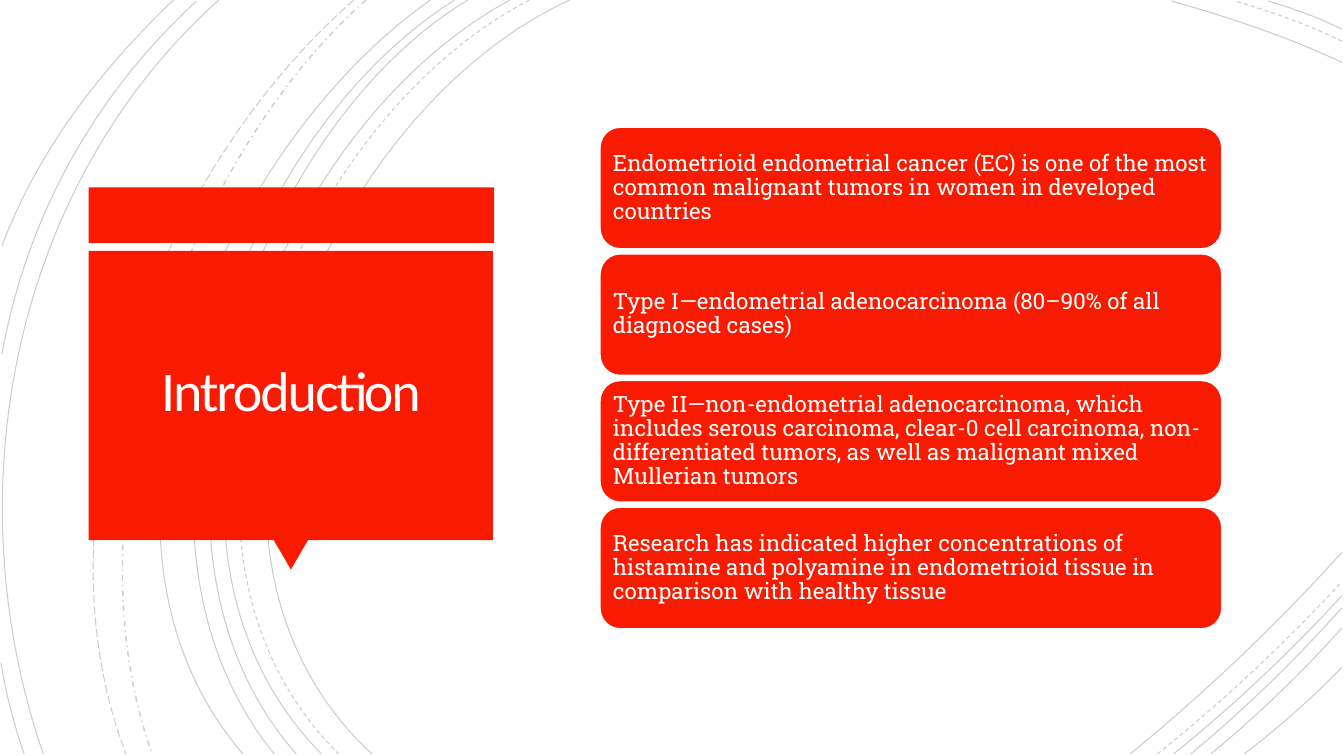
import pptx
import pptx.dml.color
import pptx.enum.dml
import pptx.enum.shapes
import pptx.enum.text
import pptx.oxml
import pptx.oxml.ns
import pptx.util

Inches = pptx.util.Inches
Pt = pptx.util.Pt
SHAPE = pptx.enum.shapes.MSO_SHAPE
DASH = pptx.enum.dml.MSO_LINE
ALIGN = pptx.enum.text.PP_ALIGN
NAMESPACE = pptx.oxml.ns.nsdecls("a")

COLORS = {"red": "F81B02", "white": "FFFFFF", "title": "FFFEFF", "arc": "000000"}

ARC_STYLES = {  # name: dash, width in points
    "solid": (DASH.SOLID, 0.75),
    "dash": (DASH.DASH, 0.75),
    "long dash": (DASH.LONG_DASH, 0.75),
    "dash dot": (DASH.DASH_DOT, 1),
}
ARC_RIGHT, ARC_TOP, ARC_BOTTOM = 13.31, 0.01, 7.48

# Sweeps cross the full height: style, top x, upper control, lower control, bottom x.
SWEEPS = [
    ("solid", 5.65, (3.15, 1.15), (1.43, 5.4), 3.69),
    ("dash", 5.25, (2.85, 1.25), (1.23, 5.37), 3.36),
    ("solid", 5.06, (2.7, 1.27), (1.1, 5.37), 3.19),
    ("solid", 4.64, (2.44, 1.33), (1.1, 5.41), 2.94),
    ("solid", 4.51, (2.31, 1.38), (0.97, 5.33), 2.72),
    ("solid", 4.27, (2.17, 1.47), (0.53, 5.29), 2.41),
    ("dash dot", 3.63, (1.76, 1.66), (0.65, 5.09), 1.51),
    ("long dash", 3.51, (1.57, 1.69), (0.29, 4.99), 1.25),
    ("solid", 2.17, (0.11, 1.85), (-0.46, 4.9), 0.43),
]

# Corner arcs cut a right corner: style, x on the top or bottom edge, y on the right edge.
TOP_CORNER = [("solid", 11.62, 0.62), ("dash", 12.25, 0.41), ("solid", 12.58, 0.29)]
BOTTOM_CORNER = [
    ("solid", 11.21, 5.48), ("dash", 11.48, 5.77), ("solid", 11.64, 5.91),
    ("solid", 11.81, 6.03), ("solid", 12.01, 6.23), ("solid", 12.34, 6.62),
]
# Bends place the two controls as fractions of the way from start to end.
TOP_BEND = ((0.32, 0.42), (0.67, 0.74))
BOTTOM_BEND = ((0.35, 0.3), (0.69, 0.64))

# Left edge arcs: start, end, bend.
LEFT_EDGE = [
    ((1.95, 0.01), (0.02, 3.51), ((0.53, 0.27), (0.87, 0.61))),
    ((1.72, 0), (0.02, 2.44), ((0.42, 0.28), (0.79, 0.61))),
    ((0.01, 6.58), (0.24, 7.48), ((0.22, 0.34), (0.57, 0.68))),
]

STATEMENTS = [
    "Endometrioid endometrial cancer (EC) is one of the most common malignant "
    "tumors in women in developed countries",
    "Type I—endometrial adenocarcinoma (80–90% of all diagnosed cases)",
    "Type II—non-endometrial adenocarcinoma, which includes serous carcinoma, "
    "clear-0 cell carcinoma, non-differentiated tumors, as well as malignant "
    "mixed Mullerian tumors",
    "Research has indicated higher concentrations of histamine and polyamine in "
    "endometrioid tissue in comparison with healthy tissue",
]
FIRST_CARD_TOP, LAST_CARD_TOP = 1.26, 5.03


def rgb(name):
    return pptx.dml.color.RGBColor.from_string(COLORS[name])


def set_attributes(target, values):
    for name, value in values.items():
        setattr(target, name, value)


def add_arc(slide, style, *points):
    """Draw a faint cubic curve through start, two controls and end."""
    start, *others = [(Inches(x), Inches(y)) for x, y in points]
    builder = slide.shapes.build_freeform(*start, scale=1.0)
    builder.add_line_segments(others, close=False)
    arc = builder.convert_to_shape()
    segments = arc.element.xpath(".//a:lnTo")
    curve = pptx.oxml.parse_xml(f"<a:cubicBezTo {NAMESPACE}/>")
    segments[0].addprevious(curve)
    for segment in segments:
        curve.append(segment[0])
        segment.getparent().remove(segment)
    arc.shadow.inherit = False
    arc.fill.background()
    arc.line.color.rgb = rgb("arc")
    dash, width = ARC_STYLES[style]
    set_attributes(arc.line, {"width": Pt(width), "dash_style": dash})
    color = arc.element.xpath("./p:spPr/a:ln//a:srgbClr")[0]
    color.append(pptx.oxml.parse_xml(f'<a:alpha {NAMESPACE} val="20000"/>'))


def add_bent_arc(slide, style, start, end, bend):
    """Draw an arc whose controls are fractions of the span from start to end."""
    controls = [
        (start[0] + across * (end[0] - start[0]), start[1] + down * (end[1] - start[1]))
        for across, down in bend
    ]
    add_arc(slide, style, start, *controls, end)


def add_background_arcs(slide):
    for style, top_x, upper, lower, bottom_x in SWEEPS:
        add_arc(slide, style, (top_x, 0), upper, lower, (bottom_x, ARC_BOTTOM))
    for style, x, y in TOP_CORNER:
        add_bent_arc(slide, style, (ARC_RIGHT, y), (x, ARC_TOP), TOP_BEND)
    for style, x, y in BOTTOM_CORNER:
        add_bent_arc(slide, style, (x, ARC_BOTTOM), (ARC_RIGHT, y), BOTTOM_BEND)
    for start, end, bend in LEFT_EDGE:
        add_bent_arc(slide, "solid", start, end, bend)


def add_red_shape(slide, kind, left, top, width, height):
    shape = slide.shapes.add_shape(
        kind, Inches(left), Inches(top), Inches(width), Inches(height))
    shape.shadow.inherit = False
    shape.fill.solid()
    shape.fill.fore_color.rgb = rgb("red")
    shape.line.fill.background()
    return shape


def write_text(shape, text, inset, paragraph_format, font_format, color):
    frame = shape.text_frame
    frame.text = text
    margins = ("margin_left", "margin_top", "margin_right", "margin_bottom")
    set_attributes(frame, dict.fromkeys(margins, Inches(inset)))
    set_attributes(frame, {
        "word_wrap": True,
        "auto_size": pptx.enum.text.MSO_AUTO_SIZE.NONE,
        "vertical_anchor": pptx.enum.text.MSO_ANCHOR.MIDDLE,
    })
    paragraph = frame.paragraphs[0]
    set_attributes(paragraph, paragraph_format)
    font = paragraph.runs[0].font
    set_attributes(font, font_format)
    font.color.rgb = rgb(color)


def add_title_callout(slide):
    add_red_shape(slide, SHAPE.RECTANGLE, 0.88, 1.86, 4.02, 0.55)
    pointer = add_red_shape(slide, SHAPE.ISOSCELES_TRIANGLE, 2.71, 5.35, 0.35, 0.3)
    pointer.rotation = 180
    add_red_shape(slide, SHAPE.RECTANGLE, 0.88, 2.49, 4.01, 2.87)


def add_title(slide):
    """Fill the title placeholder and bring it in front of the callout."""
    title = slide.shapes.title
    set_attributes(title, {
        "left": Inches(0.97), "top": Inches(2.57),
        "width": Inches(3.83), "height": Inches(2.69),
    })
    write_text(title, "Introduction", 0.25,
               {"alignment": ALIGN.CENTER, "line_spacing": 0.85},
               {"name": "Calibri", "size": Pt(40)}, "title")
    title.element.xpath(".//a:rPr")[0].set("spc", "-150")
    title.element.getparent().append(title.element)


def add_card(slide, top, statement):
    card = add_red_shape(slide, SHAPE.ROUNDED_RECTANGLE, 5.95, top, 6.17, 1.21)
    card.line.color.rgb = rgb("white")
    card.line.width = Pt(1.25)
    write_text(card, statement, 0.07,
               {"alignment": ALIGN.LEFT, "line_spacing": 0.9},
               {"name": "Roboto Slab", "size": Pt(16)}, "white")


def main():
    presentation = pptx.Presentation()
    presentation.slide_width = Inches(13.33)
    presentation.slide_height = Inches(7.5)
    title_only = presentation.slide_layouts[5]
    slide = presentation.slides.add_slide(title_only)
    add_background_arcs(slide)
    add_title_callout(slide)
    add_title(slide)
    pitch = (LAST_CARD_TOP - FIRST_CARD_TOP) / (len(STATEMENTS) - 1)
    for index, statement in enumerate(STATEMENTS):
        add_card(slide, FIRST_CARD_TOP + index * pitch, statement)
    presentation.save("out.pptx")


if __name__ == "__main__":
    main()
